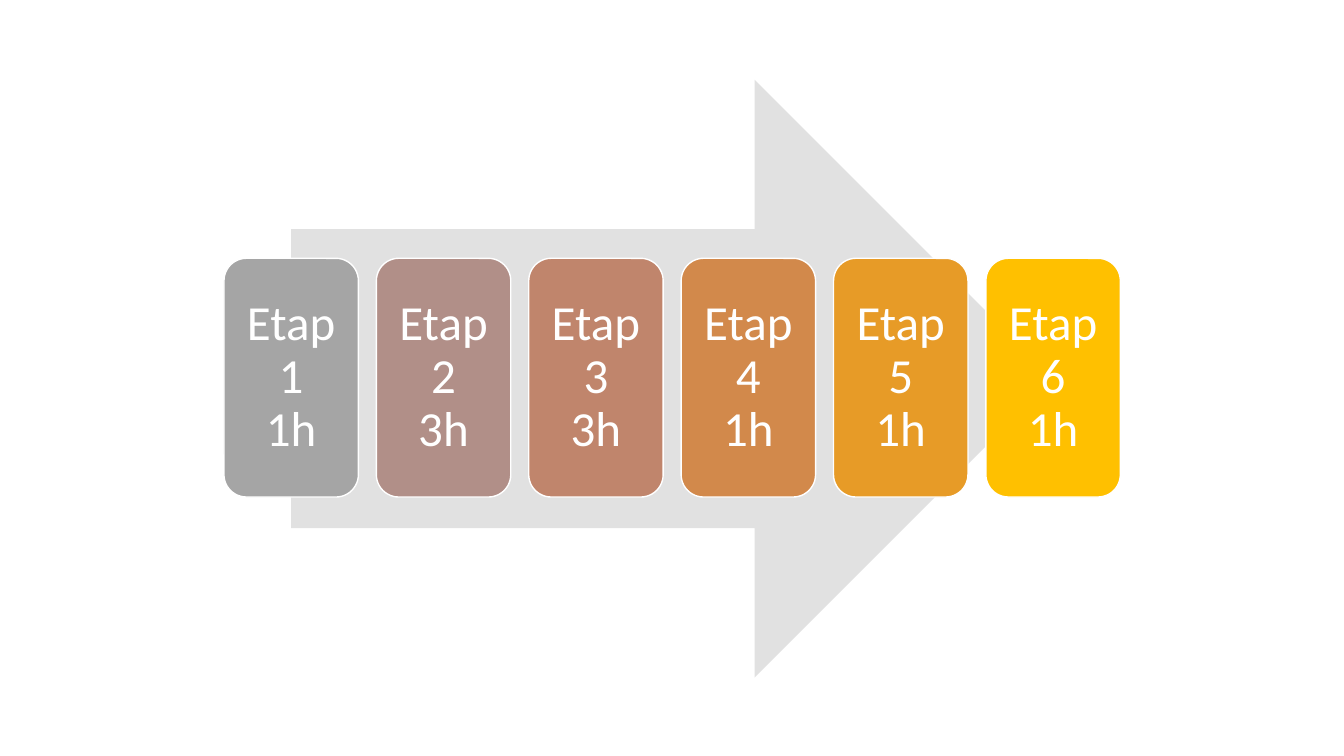
from pptx import Presentation
from pptx.dml.color import RGBColor
from pptx.enum.shapes import MSO_SHAPE
from pptx.enum.text import MSO_ANCHOR, PP_ALIGN
from pptx.util import Pt

ARROW = MSO_SHAPE.RIGHT_ARROW
CARD = MSO_SHAPE.ROUNDED_RECTANGLE
CENTER = PP_ALIGN.CENTER
MIDDLE = MSO_ANCHOR.MIDDLE

STAGES = [
    ("1h", "A5A5A5"),
    ("3h", "B18F88"),
    ("3h", "C0856C"),
    ("1h", "D2894B"),
    ("1h", "E79B27"),
    ("1h", "FFC000"),
]
CARD_LEFT, CARD_TOP = 160, 184.5
CARD_WIDTH, CARD_HEIGHT = 96, 170.5
CARD_STEP = 108.85
FRAME_FORMAT = {
    "word_wrap": True,
    "vertical_anchor": MIDDLE,
    "margin_left": Pt(6),
    "margin_right": Pt(6),
    "margin_top": Pt(6),
    "margin_bottom": Pt(6),
}


def color(hex_value):
    return RGBColor.from_string(hex_value)


def add_block(kind, left, top, width, height, fill):
    block = slide.shapes.add_shape(kind, Pt(left), Pt(top), Pt(width), Pt(height))
    block.shadow.inherit = False
    block.fill.solid()
    block.fill.fore_color.rgb = color(fill)
    return block


prs = Presentation()
prs.slide_width, prs.slide_height = Pt(960), Pt(540)
slide = prs.slides.add_slide(prs.slide_layouts[6])

# Background arrow
process_arrow = add_block(ARROW, 208, 57, 544.5, 427, "E1E1E1")
process_arrow.line.fill.background()

# Stage cards with their duration
for index, (duration, fill) in enumerate(STAGES):
    stage = add_block(CARD, CARD_LEFT + index * CARD_STEP, CARD_TOP,
                      CARD_WIDTH, CARD_HEIGHT, fill)
    stage.line.color.rgb = color("FFFFFF")
    stage.line.width = Pt(1)

    frame = stage.text_frame
    for name, value in FRAME_FORMAT.items():
        setattr(frame, name, value)
    label = frame.paragraphs[0]
    label.text = f"Etap {index + 1}\v{duration}"
    label.alignment = CENTER
    label.line_spacing = 0.9
    for run in label.runs:
        run.font.name = "Calibri"
        run.font.size = Pt(35)
        run.font.color.rgb = color("FFFFFF")

prs.save("out.pptx")
